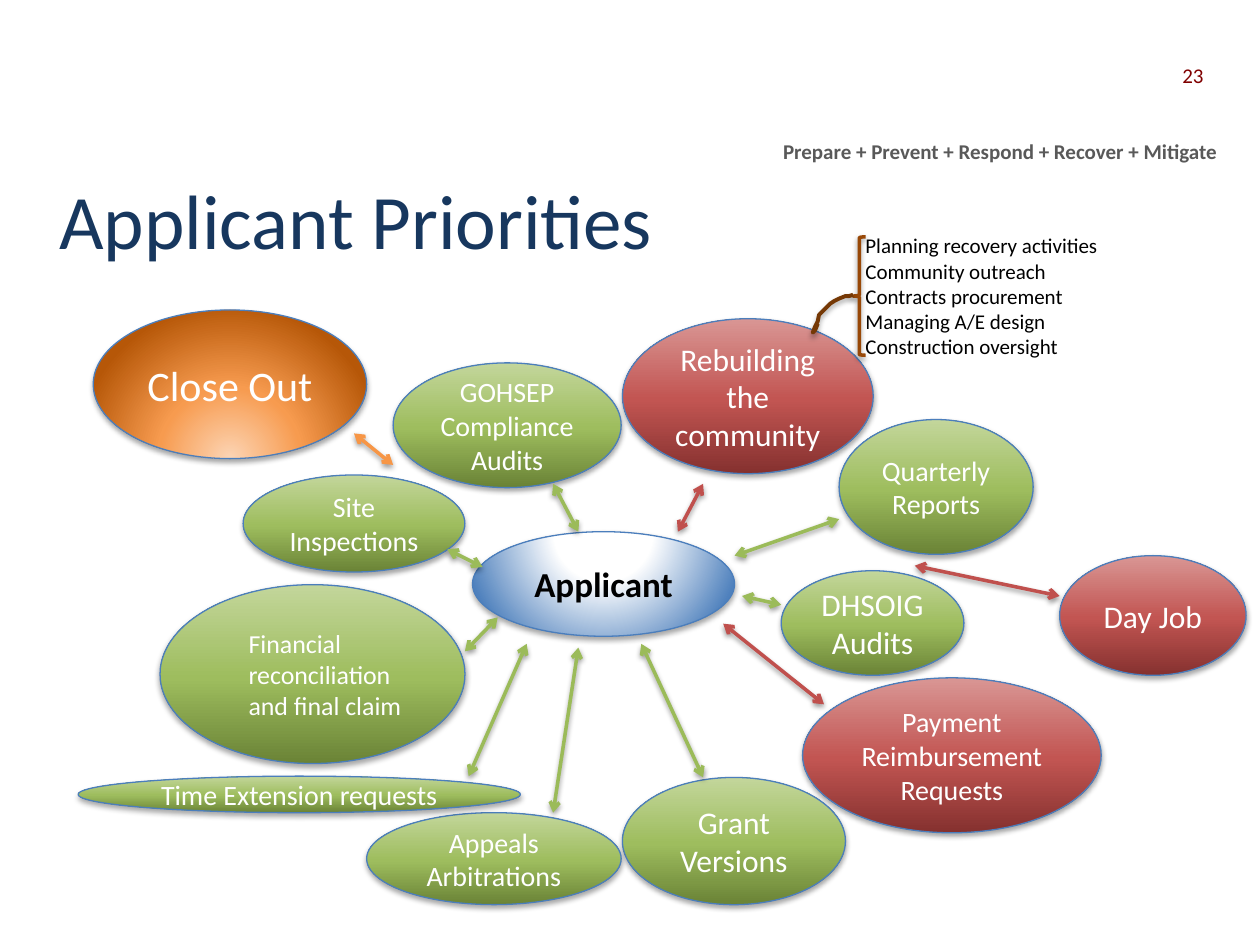
from lxml import etree
from pptx import Presentation
from pptx import util as u
from pptx.dml.color import RGBColor
from pptx.enum import shapes, text
from pptx.oxml import parse_xml
from pptx.oxml.ns import nsdecls, qn

FONT = "Calibri"
GREEN, RED, ORANGE = "9BBB59", "C0504D", "F79646"

LINEAR = '<a:lin ang="16200000" scaled="0"/>'
CIRCLE = ('<a:path path="circle"><a:fillToRect l="50000" t="{}" '
          'r="50000" b="{}"/></a:path>')
# Gradient stops (percent, colour) and the way the gradient runs
GRADIENTS = {
    "green": ([(0, "6A8336"), (48, "9EBD5E"), (100, "C3D69B")], LINEAR),
    "red": ([(0, "85312F"), (48, "C25552"), (100, "D99694")], LINEAR),
    "orange": ([(0, "FCD5B5"), (46, "F79B4F"), (100, "B65708")],
               CIRCLE.format(130000, -30000)),
    "blue": ([(0, "FFFFFF"), (35, "FFFFFF"), (100, "4F81BD")],
             CIRCLE.format(-80000, 180000)),
}

# Left, top, width, height, gradient, text size, paragraphs
BUBBLES = [
    (0.74, 0.46, 2.17, 1.18, "orange", 24, ["Close Out"]),
    (4.94, 0.53, 1.99, 1.23, "red", 18, ["Rebuilding the community"]),
    (6.66, 1.33, 1.54, 1.07, "green", 16, ["Quarterly Reports"]),
    (6.2, 2.53, 1.45, 0.83, "green", 18, ["DHSOIG Audits"]),
    (6.37, 3.38, 2.37, 1.23, "red", 16, ["Payment", "Reimbursement Requests"]),
    (4.94, 4.17, 1.77, 1.01, "green", 18, ["Grant Versions"]),
    (1.93, 1.77, 1.76, 0.77, "green", 16, ["Site", "Inspections"]),
    (3.12, 0.88, 1.81, 0.99, "green", 16, ["GOHSEP Compliance", "Audits"]),
    (2.91, 4.45, 2.02, 0.73, "green", 16, ["Appeals", "Arbitrations"]),
    (8.41, 2.41, 1.48, 0.95, "red", 18, ["Day Job"]),
    (0.62, 4.16, 3.51, 0.29, "green", 16, ["Time Extension requests"]),
]

# Start x, start y, end x, end y, colour
ARROWS = [
    (4.39, 1.84, 4.59, 2.22, GREEN),
    (5.58, 1.84, 5.38, 2.22, RED),
    (5.83, 2.41, 6.66, 2.12, GREEN),
    (5.89, 2.73, 6.2, 2.8, GREEN),
    (5.74, 2.95, 6.54, 3.59, RED),
    (5.09, 3.11, 5.58, 4.17, GREEN),
    (3.69, 3.17, 3.95, 2.9, GREEN),
    (3.55, 2.36, 3.83, 2.5, GREEN),
    (0.81 + 2, 1.44, 3.12, 1.69, ORANGE),
    (4.59, 3.14, 4.39, 4.45, GREEN),
    (8.41, 2.73, 7.26, 2.49, RED),
    (3.72, 4.16, 4.18, 3.11, GREEN),
]

RECOVERY_TASKS = ["Planning recovery activities", "Community outreach",
                  "Contracts procurement", "Managing A/E design",
                  "Construction oversight"]
# Hand-drawn stroke from the brace to the rebuilding bubble
STROKE = [(0.32, 0.54), (0.29, 0.55), (0.26, 0.55), (0.21, 0.57), (0.17, 0.59),
          (0.14, 0.61), (0.12, 0.63), (0.1, 0.65), (0.07, 0.68), (0.05, 0.7),
          (0.04, 0.75), (0.02, 0.79), (0, 0.84), (0.02, 0.82), (0.04, 0.77)]


def rgb(color):
    return RGBColor.from_string(color)


def inches(*lengths):
    return [u.Inches(length) for length in lengths]


def write(frame, paragraphs, size, color, align=text.PP_ALIGN.LEFT, bold=False,
          anchor=text.MSO_ANCHOR.MIDDLE):
    frame.word_wrap = True
    frame.vertical_anchor = anchor
    for index, words in enumerate(paragraphs):
        paragraph = frame.add_paragraph() if index else frame.paragraphs[0]
        paragraph.alignment = align
        run = paragraph.add_run()
        run.text = words
        run.font.name, run.font.size, run.font.bold = FONT, u.Pt(size), bold
        run.font.color.rgb = rgb(color)


def style_line(shape, color, width):
    shape.line.color.rgb = rgb(color)
    shape.line.width = u.Pt(width)


def add_shadow(shape, opacity, distance):
    """Put a soft shadow below a shape whose fill and line are already set."""
    properties = shape._element.spPr
    for effects in properties.findall(qn("a:effectLst")):
        properties.remove(effects)
    properties.append(parse_xml(
        f'<a:effectLst {nsdecls("a")}><a:outerShdw blurRad="{u.Pt(3.1)}" '
        f'dist="{u.Pt(distance)}" dir="5400000" rotWithShape="0">'
        f'<a:srgbClr val="000000"><a:alpha val="{opacity * 1000}"/></a:srgbClr>'
        '</a:outerShdw></a:effectLst>'))


def fill_gradient(shape, name):
    stops, direction = GRADIENTS[name]
    stop_xml = "".join(f'<a:gs pos="{position * 1000}"><a:srgbClr val="{color}"/></a:gs>'
                       for position, color in stops)
    shape._element.spPr.find(qn("a:prstGeom")).addnext(parse_xml(
        f'<a:gradFill {nsdecls("a")} rotWithShape="1"><a:gsLst>{stop_xml}</a:gsLst>'
        f'{direction}</a:gradFill>'))


def add_bubble(slide, box, gradient, size, paragraphs, color="FFFFFF",
               align=text.PP_ALIGN.CENTER, bold=False):
    bubble = slide.shapes.add_shape(shapes.MSO_SHAPE.OVAL, *inches(*box))
    fill_gradient(bubble, gradient)
    style_line(bubble, "4B7EBC", 0.75)
    add_shadow(bubble, 35, 1.8)
    write(bubble.text_frame, paragraphs, size, color, align, bold)
    return bubble


def add_double_arrow(slide, ends, color):
    arrow = slide.shapes.add_connector(shapes.MSO_CONNECTOR.STRAIGHT, *inches(*ends))
    style_line(arrow, color, 2)
    for end in ("a:headEnd", "a:tailEnd"):
        etree.SubElement(arrow.line._get_or_add_ln(), qn(end), type="arrow")
    add_shadow(arrow, 38, 1.6)


def add_header(slide, box):
    """Place the page number, the motto and the title."""
    left, top = box[:2]
    right = text.PP_ALIGN.RIGHT
    motto = slide.shapes.add_textbox(*inches(left + 4.36, top + 1.05, 5.4, 0.3))
    write(motto.text_frame, ["Prepare + Prevent + Respond + Recover + Mitigate"],
          12, "595959", right, True, text.MSO_ANCHOR.TOP)
    number = slide.shapes.add_textbox(*inches(left + 5.64, top + 0.21, 4.01, 0.77))
    write(number.text_frame, ["23"], 12, "800000", right)
    title = slide.shapes.title
    title.left, title.top, title.width, title.height = inches(
        left + 0.37, top + 1.24, 5.08, 0.99)
    write(title.text_frame, ["Applicant Priorities"], 44, "17375E")


def add_priority_map(slide, box):
    """Place the applicant, the duties around it and the arrows between them."""
    left, top = box[:2]
    add_bubble(slide, (left + 3.75, top + 2.22, 2.08, 0.83), "blue", 20,
               ["Applicant"], color="000000", bold=True)
    claim = add_bubble(slide, (left + 1.27, top + 2.64, 2.42, 1.42), "green", 14.8,
                       ["Financial reconciliation and final claim"],
                       align=text.PP_ALIGN.LEFT)
    indent = claim.text_frame.paragraphs[0]._p.get_or_add_pPr()
    indent.set("marL", str(u.Inches(0.25)))
    indent.set("indent", "0")
    for x, y, width, height, gradient, size, paragraphs in BUBBLES:
        add_bubble(slide, (left + x, top + y, width, height), gradient, size, paragraphs)
    for x1, y1, x2, y2, color in ARROWS:
        add_double_arrow(slide, (left + x1, top + y1, left + x2, top + y2), color)


def add_recovery_tasks(slide, box):
    """Place the task list with its brace and the stroke leading to it."""
    left, top, width, height = box
    tasks = slide.shapes.add_textbox(*inches(left + 0.32, top, width - 0.32, height))
    write(tasks.text_frame, RECOVERY_TASKS, 12, "000000", anchor=text.MSO_ANCHOR.TOP)
    brace = slide.shapes.add_shape(shapes.MSO_SHAPE.LEFT_BRACE,
                                   *inches(left + 0.32, top + 0.08, 0.1, 0.94))
    points = [inches(left + x, top + y) for x, y in STROKE]
    builder = slide.shapes.build_freeform(*points[0])
    builder.add_line_segments(points[1:], close=False)
    stroke = builder.convert_to_shape()
    for shape, color, weight, opacity, distance in (
            (brace, "984807", 2, 38, 1.6), (stroke, "753805", 2.25, 35, 1.8)):
        shape.fill.background()
        style_line(shape, color, weight)
        add_shadow(shape, opacity, distance)


def main():
    presentation = Presentation()
    presentation.slide_width, presentation.slide_height = inches(10, 7.5)
    slide = presentation.slides.add_slide(presentation.slide_layouts[5])
    add_header(slide, (0, 0, 10, 2.3))
    add_priority_map(slide, (0, 2, 10, 5.5))
    add_recovery_tasks(slide, (6.45, 1.8, 2.61, 1.11))
    presentation.save("out.pptx")


if __name__ == "__main__":
    main()
